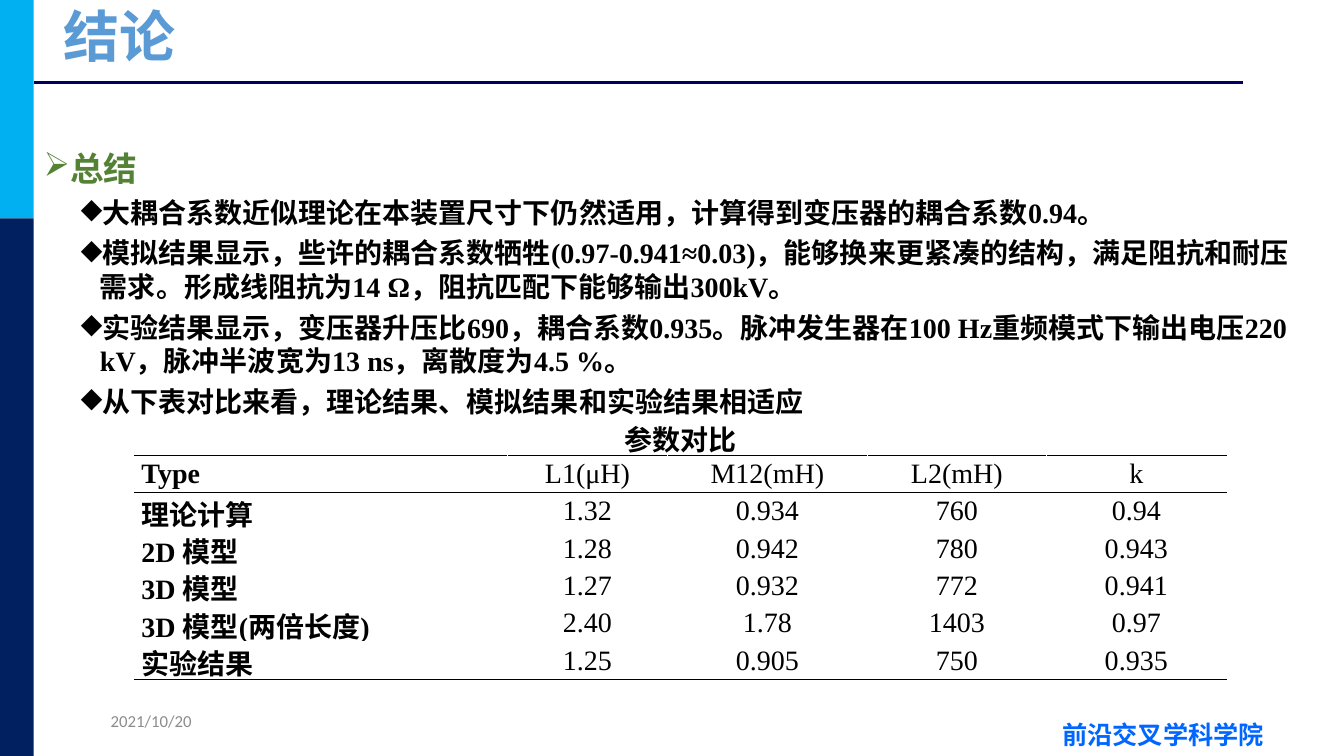
import pptx
import pptx.util
import pptx.dml.color
import pptx.enum.shapes
import pptx.enum.text
import pptx.oxml.ns
import lxml.etree

Pt = pptx.util.Pt
RGB = pptx.dml.color.RGBColor
ALIGN = pptx.enum.text.PP_ALIGN
MIDDLE = pptx.enum.text.MSO_ANCHOR.MIDDLE
qn = pptx.oxml.ns.qn

SKY = RGB(0x00, 0xB0, 0xF0)
NAVY = RGB(0x00, 0x20, 0x60)
RULE = RGB(0x00, 0x00, 0x60)
BLUE = RGB(0x5B, 0x9B, 0xD5)
LINK = RGB(0x00, 0x66, 0xFF)
GREEN = RGB(0x54, 0x82, 0x35)
GRAY = RGB(0x8C, 0x8C, 0x8C)
BLACK = RGB(0, 0, 0)
WHITE = RGB(0xFF, 0xFF, 0xFF)

SANS = "Noto Sans CJK SC"
SERIF = "Times New Roman"

# The slide is a grid of 40 columns by 22.5 rows of square units.
COLS, ROWS = 40, 22.5
UNIT = pptx.util.Inches(1) / 3

POINTS = [
    "大耦合系数近似理论在本装置尺寸下仍然适用，计算得到变压器的耦合系数0.94。",
    "模拟结果显示，些许的耦合系数牺牲(0.97-0.941≈0.03)，能够换来更紧凑的结构，"
    "满足阻抗和耐压需求。形成线阻抗为14 Ω，阻抗匹配下能够输出300kV。",
    "实验结果显示，变压器升压比690，耦合系数0.935。脉冲发生器在100 Hz重频模式下"
    "输出电压220 kV，脉冲半波宽为13 ns，离散度为4.5 %。",
    "从下表对比来看，理论结果、模拟结果和实验结果相适应",
]
CAPTION = "参数对比"
DATA = [
    ["Type", "L1(μH)", "M12(mH)", "L2(mH)", "k"],
    ["理论计算", "1.32", "0.934", "760", "0.94"],
    ["2D 模型", "1.28", "0.942", "780", "0.943"],
    ["3D 模型", "1.27", "0.932", "772", "0.941"],
    ["3D 模型(两倍长度)", "2.40", "1.78", "1403", "0.97"],
    ["实验结果", "1.25", "0.905", "750", "0.935"],
]
WIDTHS = [11.1, 4.77, 5.94, 5.34, 5.34]


def grid(*units):
    return [round(unit * UNIT) for unit in units]


def write(para, text, size=20, font=SERIF, color=BLACK, bold=True,
          align=None, lines=None, before=None):
    run = para.add_run()
    run.text = text
    run.font.size = Pt(size)
    run.font.name = font
    run.font.bold = bold
    run.font.color.rgb = color
    east = lxml.etree.SubElement(run.font._element, qn("a:ea"))
    east.set("typeface", SANS)
    para.alignment = align
    para.line_spacing = lines
    para.space_before = before


def bullet(para, mark, left, hang):
    props = para._p.get_or_add_pPr()
    margin, indent = grid(left, -hang)
    props.set("marL", str(margin))
    props.set("indent", str(indent))
    lxml.etree.SubElement(props, qn("a:buChar")).set("char", mark)


def box(slide, *place, anchor=None):
    frame = slide.shapes.add_textbox(*grid(*place)).text_frame
    frame.word_wrap = True
    frame.vertical_anchor = anchor
    return frame


def band(slide, top, height, color):
    rect = pptx.enum.shapes.MSO_SHAPE.RECTANGLE
    shape = slide.shapes.add_shape(rect, *grid(0, top, 1, height))
    shape.shadow.inherit = False
    shape.fill.solid()
    shape.fill.fore_color.rgb = color
    shape.line.fill.background()


def rule(slide, left, right, y):
    kind = pptx.enum.shapes.MSO_CONNECTOR.STRAIGHT
    line = slide.shapes.add_connector(kind, *grid(left, y, right, y))
    line.line.color.rgb = RULE
    line.line.width = Pt(2.5)
    lxml.etree.SubElement(line._element.spPr, qn("a:effectLst"))


def edge(cell, side, color):
    """Draw one border of a cell; side is L, R, T or B."""
    line = lxml.etree.Element(qn("a:ln" + side), w=str(Pt(1)))
    fill = lxml.etree.SubElement(line, qn("a:solidFill"))
    lxml.etree.SubElement(fill, qn("a:srgbClr")).set("val", str(color))
    return line


def style(cell, top, bottom):
    cell.vertical_anchor = MIDDLE
    cell.margin_left = cell.margin_right = grid(0.21)[0]
    cell.margin_top = cell.margin_bottom = 0
    cell.fill.solid()
    cell.fill.fore_color.rgb = WHITE
    sides = zip("LRTB", (WHITE, WHITE, top, bottom))
    props = cell._tc.get_or_add_tcPr()
    for index, (side, color) in enumerate(sides):
        props.insert(index, edge(cell, side, color))


def compare(slide):
    count = len(DATA) + 1
    place = grid(4, 12.45, sum(WIDTHS), 1.11 * count)
    table = slide.shapes.add_table(count, len(WIDTHS), *place).table
    for column, width in zip(table.columns, WIDTHS):
        column.width = grid(width)[0]
    ruled = {1, 2, count}  # rows with a black line above them
    for r in range(count):
        top, bottom = (BLACK if n in ruled else WHITE for n in (r, r + 1))
        for c in range(len(WIDTHS)):
            style(table.cell(r, c), top, bottom)
    table.cell(0, 0).merge(table.cell(0, len(WIDTHS) - 1))
    write(table.cell(0, 0).text_frame.paragraphs[0], CAPTION,
          align=ALIGN.CENTER)
    for r, row in enumerate(DATA, 1):
        for c, text in enumerate(row):
            write(table.cell(r, c).text_frame.paragraphs[0], text,
                  bold=c == 0, align=ALIGN.CENTER if c else ALIGN.JUSTIFY)


def summary(slide):
    frame = box(slide, 1, 3.9, 37.74, 16.11)
    head = frame.paragraphs[0]
    bullet(head, "➢", 0.57, 0.57)
    write(head, "总结", size=24, color=GREEN, lines=1.3)
    for text in POINTS:
        para = frame.add_paragraph()
        bullet(para, "◆", 1.68, 0.57)
        write(para, text, lines=Pt(24), before=Pt(5))


def main():
    deck = pptx.Presentation()
    deck.slide_width, deck.slide_height = grid(COLS, ROWS)
    slide = deck.slides.add_slide(deck.slide_layouts[6])
    band(slide, 0, 6.5, SKY)
    band(slide, 6.5, 16, NAVY)
    rule(slide, 1, 37, 2.46)
    write(box(slide, 31.32, 21.27, 9, 1.2).paragraphs[0], "前沿交叉学科学院",
          size=18, font=SANS, color=LINK)
    write(box(slide, 1.6, 0.06, 35.25, 2.25, anchor=MIDDLE).paragraphs[0],
          "结论", size=40, font=SANS, color=BLUE, lines=0.9)
    summary(slide)
    write(box(slide, 3, 20.85, 3.93, 1.2, anchor=MIDDLE).paragraphs[0],
          "2021/10/20", size=12, font="Calibri", color=GRAY, bold=False)
    compare(slide)
    deck.save("out.pptx")


if __name__ == "__main__":
    main()
